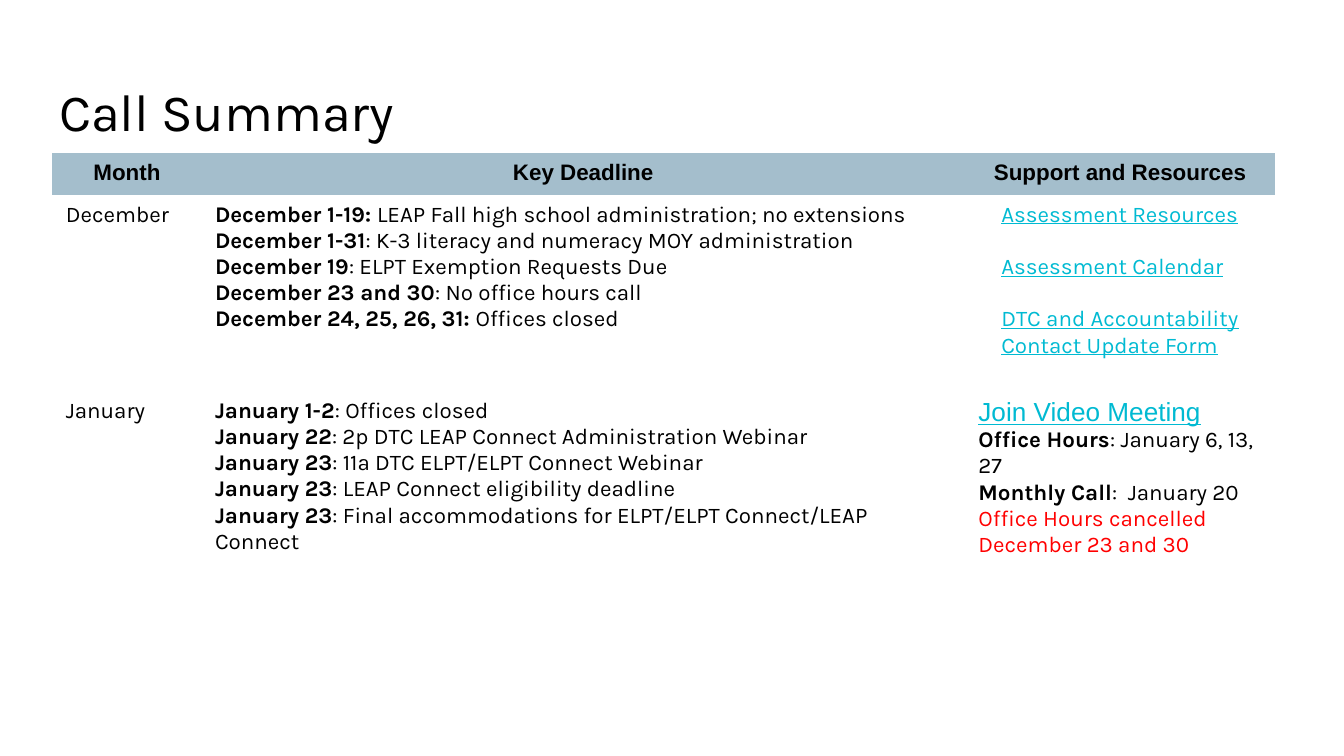
"""Build the call summary slide with its table of deadlines and resources."""
from pptx import Presentation
from pptx.dml.color import RGBColor
from pptx.enum.text import MSO_ANCHOR, MSO_AUTO_SIZE, PP_ALIGN
from pptx.oxml.ns import qn
from pptx.util import Inches, Pt

LEFT, CENTER = PP_ALIGN.LEFT, PP_ALIGN.CENTER
TOP, NO_AUTOFIT = MSO_ANCHOR.TOP, MSO_AUTO_SIZE.NONE
NO_GRID_STYLE = "{2D5ABB26-0587-4C30-8999-92F81FD0307C}"
BLACK, RED, LINK_BLUE, HEADER_BLUE = "000000", "FF0000", "00BAD2", "A4BECC"

BODY = {"name": "Karla", "size": Pt(12), "bold": False, "color": BLACK}
BOLD = {**BODY, "bold": True}
HEADER = {**BOLD, "name": "Arial"}
LINK = {**BODY, "color": LINK_BLUE, "underline": True}
MEETING_LINK = {**LINK, "name": "Arial", "size": Pt(14)}
ALERT = {**BODY, "color": RED}
TITLE = {**BODY, "size": Pt(28)}


def set_font(font, formats):
    """Apply a dict of format values to a font."""
    for name, value in formats.items():
        if name == "color":
            font.color.rgb = RGBColor.from_string(value)
        else:
            setattr(font, name, value)


def write_paragraphs(text_frame, paragraphs, alignment=LEFT, gap=0):
    """Write paragraphs given as lists of (text, formats) runs."""
    for index, runs in enumerate(paragraphs):
        paragraph = text_frame.add_paragraph() if index else text_frame.paragraphs[0]
        paragraph.alignment = alignment
        paragraph.space_before = Pt(gap if index else 0)
        for text, formats in runs:
            run = paragraph.add_run()
            run.text = text
            set_font(run.font, formats)


presentation = Presentation()
presentation.slide_width = Inches(10)
presentation.slide_height = Inches(10) * 9 // 16
slide = presentation.slides.add_slide(presentation.slide_layouts[5])

title = slide.shapes.title
title.left, title.top = Inches(0.34), Inches(0.49)
title.width, title.height = Inches(9.32), Inches(0.63)
title_format = {"auto_size": NO_AUTOFIT, "vertical_anchor": TOP, "word_wrap": True}
for side in ("left", "top", "right", "bottom"):
    title_format[f"margin_{side}"] = Inches(0.1)
for name, value in title_format.items():
    setattr(title.text_frame, name, value)
write_paragraphs(title.text_frame, [[("Call Summary", TITLE)]])

headers = ["Month", "Key Deadline", "Support and Resources"]
deadlines = {
    "December": [
        ("December 1-19: ", "LEAP Fall high school administration; no extensions"),
        ("December 1-31", ": K-3 literacy and numeracy MOY administration"),
        ("December 19", ": ELPT Exemption Requests Due"),
        ("December 23 and 30", ": No office hours call"),
        ("December 24, 25, 26, 31: ", "Offices closed"),
    ],
    "January": [
        ("January 1-2", ": Offices closed"),
        ("January 22", ": 2p DTC LEAP Connect Administration Webinar"),
        ("January 23", ": 11a DTC ELPT/ELPT Connect Webinar"),
        ("January 23", ": LEAP Connect eligibility deadline"),
        ("January 23", ": Final accommodations for ELPT/ELPT Connect/LEAP Connect"),
    ],
}
resources = [
    "Assessment Resources",
    "Assessment Calendar",
    "DTC and Accountability Contact Update Form",
]
meetings = [
    [("Join Video Meeting", MEETING_LINK)],
    [("Office Hours", BOLD), (": January 6, 13, 27", BODY)],
    [("Monthly Call", BOLD), (":  January 20", BODY)],
    [("Office Hours cancelled December 23 and 30", ALERT)],
]

column_widths = [1.11, 5.68, 2.31]
row_heights = [0.31, 1.46, 1.65]
table = slide.shapes.add_table(
    len(row_heights), len(column_widths), Inches(0.39), Inches(1.14),
    Inches(sum(column_widths)), Inches(sum(row_heights)),
).table
table.first_row = table.horz_banding = False
table._tbl.tblPr.find(qn("a:tableStyleId")).text = NO_GRID_STYLE
for column, width in zip(table.columns, column_widths):
    column.width = Inches(width)
for row, height in zip(table.rows, row_heights):
    row.height = Inches(height)
for cell in table.iter_cells():
    cell.fill.background()
    cell.vertical_anchor = TOP

for column_index, header in enumerate(headers):
    cell = table.cell(0, column_index)
    cell.fill.solid()
    cell.fill.fore_color.rgb = RGBColor.from_string(HEADER_BLUE)
    write_paragraphs(cell.text_frame, [[(header, HEADER)]], CENTER)

for row_index, (month, entries) in enumerate(deadlines.items(), start=1):
    write_paragraphs(table.cell(row_index, 0).text_frame, [[(month, BODY)]])
    lines = [[(date, BOLD), (event, BODY)] for date, event in entries]
    write_paragraphs(table.cell(row_index, 1).text_frame, lines)

resource_frame = table.cell(1, 2).text_frame
write_paragraphs(resource_frame, [[(name, LINK)] for name in resources], gap=14)
for paragraph in resource_frame.paragraphs:
    paragraph_properties = paragraph._p.get_or_add_pPr()
    paragraph_properties.set("marL", str(Inches(0.17)))
    paragraph_properties.set("indent", "0")
write_paragraphs(table.cell(2, 2).text_frame, meetings)

presentation.save("out.pptx")
